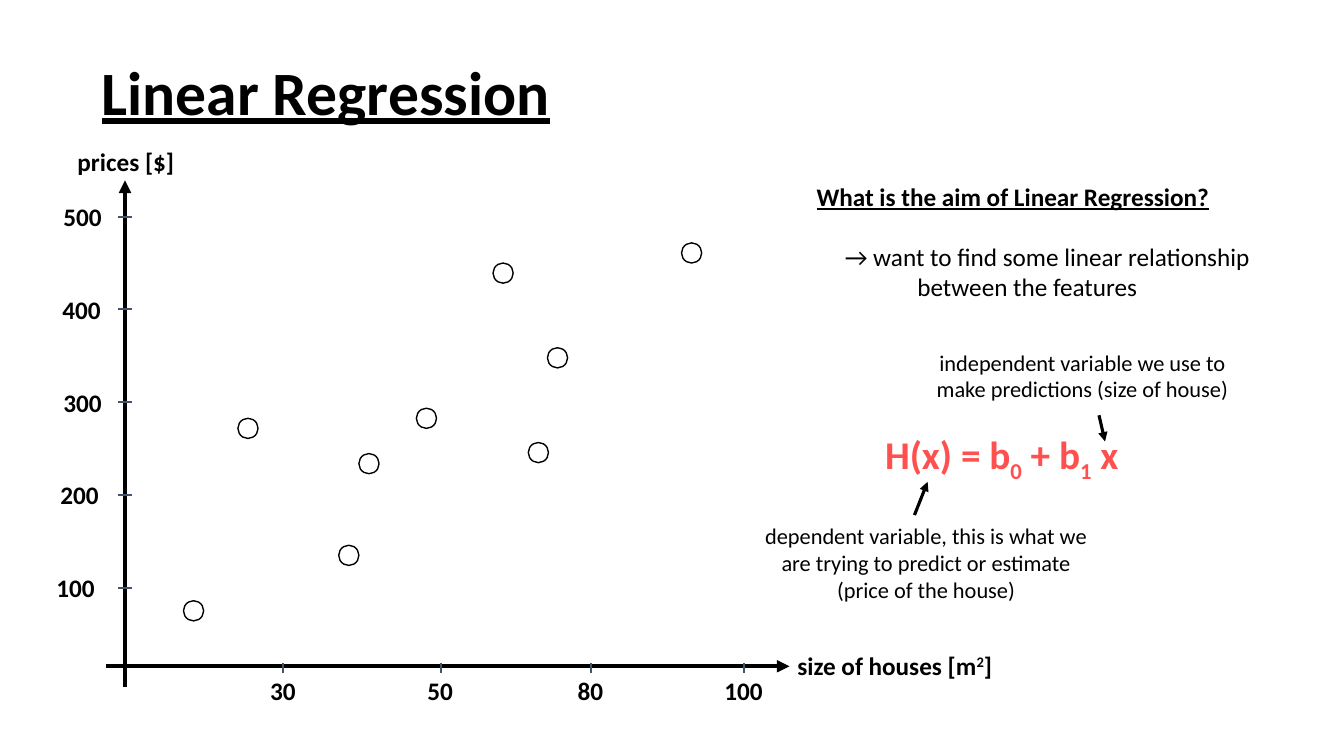
from lxml import etree
from pptx import Presentation
from pptx.dml.color import RGBColor
from pptx.enum.shapes import MSO_CONNECTOR as CONN, MSO_SHAPE as SHAPE
from pptx.enum.text import MSO_ANCHOR as ANCHOR, PP_ALIGN as ALIGN
from pptx.oxml.ns import qn
from pptx.util import Inches, Pt

BLACK = RGBColor(0x00, 0x00, 0x00)
WHITE = RGBColor(0xFF, 0xFF, 0xFF)
SLATE = RGBColor(0x44, 0x54, 0x6A)
CORAL = RGBColor(0xFF, 0x50, 0x50)

FONT = "Calibri"
DOT = 0.2
TICK = 0.14
LABEL_H = 0.4

HOUSES = [(1.22, 2.36), (2.99, 2.46), (0.68, 0.55), (2.22, 1.1), (2.42, 2.01),
          (4.1, 2.12), (3.75, 3.9), (4.29, 3.06), (5.62, 4.1)]
SIZES = [("30", 1.57, 0.46), ("50", 3.13, 0.46), ("80", 4.62, 0.46), ("100", 6.14, 0.59)]
PRICES = [("100", 0.78), ("200", 0.74), ("300", 0.71), ("400", 0.72), ("500", 0.71)]
FIRST_PRICE, PRICE_STEP = 0.78, 0.92


def add_text(s, text, left, top, width, height, size=18, color=BLACK, bold=False,
             underline=False, align=ALIGN.LEFT, anchor=ANCHOR.TOP, wrap=False,
             spacing=None):
    """Each line is a string or a list of (text, baseline shift) pairs."""
    tf = s.shapes.add_textbox(Inches(left), Inches(top), Inches(width), Inches(height)).text_frame
    tf.word_wrap = wrap
    tf.vertical_anchor = anchor
    lines = text if isinstance(text, list) else [text]
    for i, line in enumerate(lines):
        p = tf.paragraphs[0] if i == 0 else tf.add_paragraph()
        p.alignment = align
        if spacing:
            p.line_spacing = spacing
        for part, shift in [(line, 0)] if isinstance(line, str) else line:
            r = p.add_run()
            r.text = part
            font = r.font
            font.name, font.size = FONT, Pt(size)
            font.bold, font.underline = bold, underline
            font.color.rgb = color
            if shift:
                r._r.get_or_add_rPr().set("baseline", str(shift * 1000))
    return tf


def add_line(s, x1, y1, x2, y2, width, color=BLACK, arrow=False):
    line = s.shapes.add_connector(CONN.STRAIGHT, Inches(x1), Inches(y1), Inches(x2), Inches(y2))
    line.line.color.rgb = color
    line.line.width = Pt(width)
    props = line._element.spPr
    if arrow:
        etree.SubElement(props.find(qn("a:ln")), qn("a:tailEnd"), type="triangle")
    etree.SubElement(props, qn("a:effectLst"))


def add_house(s, x, y):
    sp = s.shapes.add_shape(SHAPE.OVAL, Inches(x - DOT / 2), Inches(y - DOT / 2),
                            Inches(DOT), Inches(DOT))
    sp.shadow.inherit = False
    sp.fill.solid()
    sp.fill.fore_color.rgb = WHITE
    sp.line.color.rgb = BLACK
    sp.line.width = Pt(1)


def add_title(s, left, top, width, height):
    add_text(s, "Linear Regression", left, top, width, height, size=44, bold=True,
             underline=True, anchor=ANCHOR.MIDDLE, wrap=True, spacing=0.9)


def add_plot(s, left, top, width, height):
    bottom, right = top + height, left + width
    add_line(s, left, bottom + 0.21, left, top, 3, arrow=True)
    add_line(s, left - 0.19, bottom, right, bottom, 3, arrow=True)
    for dx, dy in HOUSES:
        add_house(s, left + dx, bottom - dy)
    for label, dx, label_w in SIZES:
        x = left + dx
        add_line(s, x, bottom - 0.03, x, bottom + 0.07, 1.5, SLATE)
        add_text(s, label, x - label_w / 2, bottom + 0.04, label_w, LABEL_H, bold=True)
    for i, (label, gap) in enumerate(PRICES):
        y = bottom - FIRST_PRICE - i * PRICE_STEP
        add_line(s, left - TICK / 2, y, left + TICK / 2, y, 1.5, SLATE)
        add_text(s, label, left - gap, y - LABEL_H / 2, 0.59, LABEL_H, bold=True)
    add_text(s, [[("size of houses [m", 0), ("2", 30), ("]", 0)]], right - 0.02,
             bottom - 0.21, 2.48, LABEL_H, bold=True, wrap=True)
    add_text(s, "prices [$]", left - 0.57, top - 0.39, 1.32, LABEL_H, bold=True)


def add_aim(s, left, top, width, height):
    add_text(s, "What is the aim of Linear Regression?", left, top, width, LABEL_H,
             bold=True, underline=True, wrap=True)
    tf = add_text(s, ["→ want to find some linear relationship", "between the features"],
                  left, top + 0.59, width, height - 0.59, wrap=True)
    for p, indent in zip(tf.paragraphs, (0.28, 1)):
        p._p.get_or_add_pPr().set("marL", str(Inches(indent)))


def add_formula(s, left, top, width, height):
    add_text(s, ["independent variable we use to", "make predictions (size of house)"],
             left + width - 3.2, top, 3.19, 0.64, size=16, align=ALIGN.CENTER)
    add_line(s, left + 3.43, top + 0.71, left + 3.49, top + 0.97, 2.25, arrow=True)
    add_text(s, [[("H(x) = b", 0), ("0", -25), (" + b", 0), ("1", -25), (" x", 0)]],
             left + 1.21, top + 0.81, 3, 0.57, size=28, color=CORAL, bold=True, wrap=True)
    add_line(s, left + 1.6, top + 1.7, left + 1.73, top + 1.37, 2.25, arrow=True)
    add_text(s, ["dependent variable, this is what we", "are trying to predict or estimate",
                 "(price of the house)"],
             left, top + height - 0.91, 3.43, 0.91, size=16, align=ALIGN.CENTER)


def main():
    prs = Presentation()
    prs.slide_width, prs.slide_height = Inches(13.33), Inches(7.5)
    s = prs.slides.add_slide(prs.slide_layouts[6])
    add_title(s, 0.91, 0.22, 11.5, 1.45)
    add_plot(s, 1.24, 1.79, 6.59, 4.82)
    add_aim(s, 8, 1.75, 4.58, 1.32)
    add_formula(s, 7.47, 3.41, 4.87, 2.63)
    prs.save("out.pptx")


if __name__ == "__main__":
    main()
